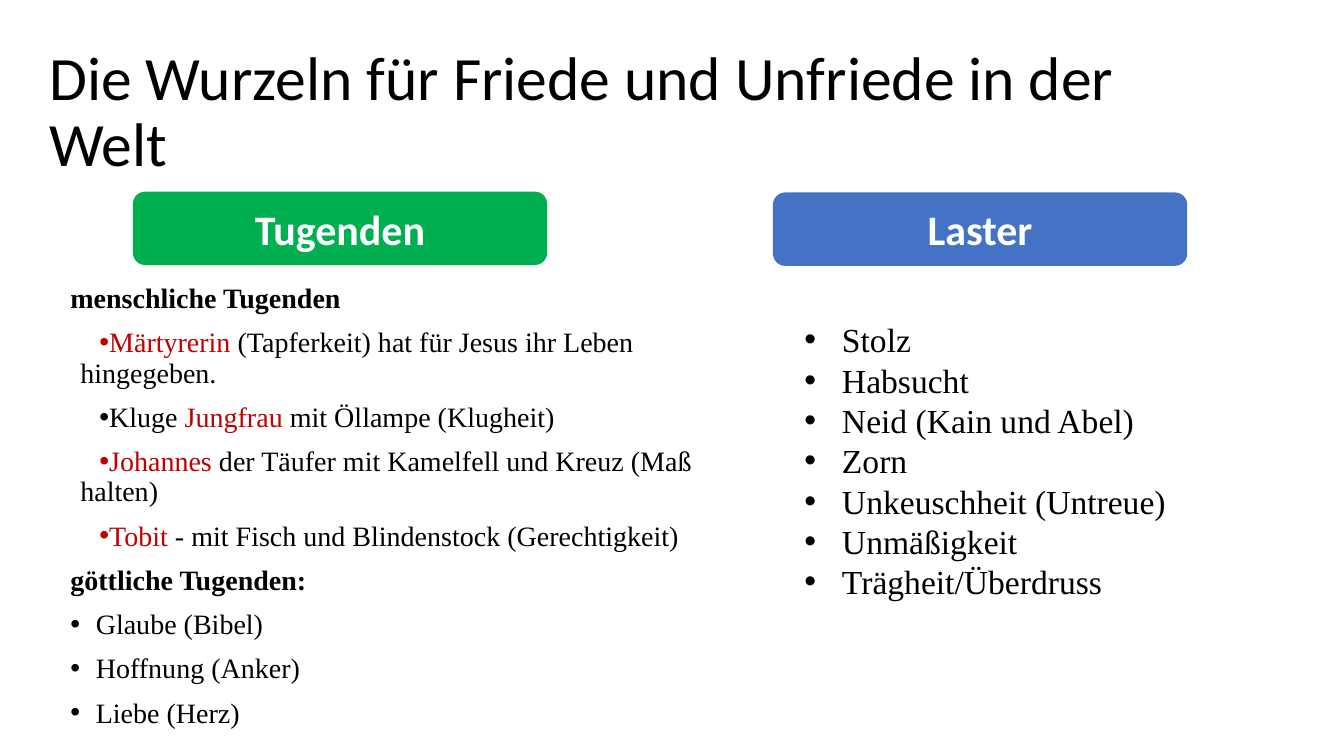
from lxml import etree
from pptx import Presentation
from pptx.dml.color import RGBColor
from pptx.enum import shapes, text
from pptx.oxml.ns import qn
from pptx.util import Cm, Pt

BLACK = RGBColor(0, 0, 0)
WHITE = RGBColor(255, 255, 255)
RED = RGBColor(0xC0, 0, 0)
GREEN = RGBColor(0, 0xB0, 0x50)
BLUE = RGBColor(0x44, 0x72, 0xC4)
SERIF = "Times New Roman"


def write(p, txt, size=20, font=SERIF, color=BLACK, bold=False):
    r = p.add_run()
    r.text = txt
    r.font.size, r.font.name, r.font.bold = Pt(size), font, bold
    r.font.color.rgb = color


def set_layout(p, margin=0, indent=0, bullet=False, line=1.0, before=0):
    """Set spacing in points, indents in cm and the bullet of a paragraph."""
    p.alignment = text.PP_ALIGN.LEFT
    p.line_spacing, p.space_before, p.space_after = line, Pt(before), Pt(0)
    pPr = p._p.get_or_add_pPr()
    pPr.set("marL", str(Cm(margin)))
    pPr.set("indent", str(Cm(indent)))
    if bullet:
        etree.SubElement(pPr, qn("a:buFont")).set("typeface", "Arial")
        etree.SubElement(pPr, qn("a:buChar")).set("char", "•")
    else:
        etree.SubElement(pPr, qn("a:buNone"))


prs = Presentation()
prs.slide_width, prs.slide_height = Cm(33.87), Cm(19.05)
s = prs.slides.add_slide(prs.slide_layouts[1])

# Title
title = s.shapes.title
title.left, title.top, title.width, title.height = Cm(0.99), Cm(1.02), Cm(30.56), Cm(3.68)
tf = title.text_frame
tf.auto_size = text.MSO_AUTO_SIZE.NONE
tf.vertical_anchor = text.MSO_ANCHOR.MIDDLE
set_layout(tf.paragraphs[0], line=0.9)
write(tf.paragraphs[0], "Die Wurzeln für Friede und Unfriede in der Welt", size=44, font="Calibri")

# Column headings
for heading, left, top, color in [("Laster", 19.48, 4.85, BLUE), ("Tugenden", 3.35, 4.83, GREEN)]:
    sp = s.shapes.add_shape(shapes.MSO_SHAPE.ROUNDED_RECTANGLE, Cm(left), Cm(top), Cm(10.44), Cm(1.85))
    sp.shadow.inherit = False
    sp.fill.solid()
    sp.fill.fore_color.rgb = color
    sp.line.fill.background()
    sp.text_frame.vertical_anchor = text.MSO_ANCHOR.MIDDLE
    p = sp.text_frame.paragraphs[0]
    p.alignment = text.PP_ALIGN.CENTER
    write(p, heading, size=30, font="Calibri", color=WHITE, bold=True)

# Virtues: the layout of each group, then its lines as (text, colour) parts
HEADING = {}
SAINT = dict(margin=0.25, indent=0.48, bullet=True)
ITEM = dict(margin=0.64, indent=-0.64, bullet=True)
virtues = [
    (HEADING, [("menschliche Tugenden", BLACK)]),
    (SAINT, [("Märtyrerin", RED), (" (Tapferkeit) hat für Jesus ihr Leben hingegeben.", BLACK)]),
    (SAINT, [("Kluge ", BLACK), ("Jungfrau", RED), (" mit Öllampe (Klugheit)", BLACK)]),
    (SAINT, [("Johannes", RED), (" der Täufer mit Kamelfell und Kreuz (Maß halten)", BLACK)]),
    (SAINT, [("Tobit ", RED), ("- mit Fisch und Blindenstock (Gerechtigkeit)", BLACK)]),
    (HEADING, [("göttliche Tugenden:", BLACK)]),
    (ITEM, [("Glaube (Bibel)", BLACK)]),
    (ITEM, [("Hoffnung (Anker)", BLACK)]),
    (ITEM, [("Liebe (Herz)", BLACK)]),
]
body = s.placeholders[1]
body.left, body.top, body.width, body.height = Cm(1.52), Cm(7.04), Cm(17.55), Cm(9.35)
tf = body.text_frame
tf.auto_size = text.MSO_AUTO_SIZE.NONE
for i, (group, parts) in enumerate(virtues):
    p = tf.add_paragraph() if i else tf.paragraphs[0]
    set_layout(p, line=0.9, before=10, **group)
    for txt, color in parts:
        write(p, txt, color=color, bold=group is HEADING)

# Vices
vices = ["Stolz", "Habsucht", "Neid (Kain und Abel)", "Zorn",
         "Unkeuschheit (Untreue)", "Unmäßigkeit", "Trägheit/Überdruss"]
tf = s.shapes.add_textbox(Cm(20.02), Cm(7.92), Cm(11.79), Cm(7.44)).text_frame
tf.word_wrap = True
tf.auto_size = text.MSO_AUTO_SIZE.SHAPE_TO_FIT_TEXT
for i, vice in enumerate(vices):
    p = tf.add_paragraph() if i else tf.paragraphs[0]
    set_layout(p, margin=0.95, indent=-0.95, bullet=True)
    write(p, vice, size=24)

prs.save("out.pptx")
